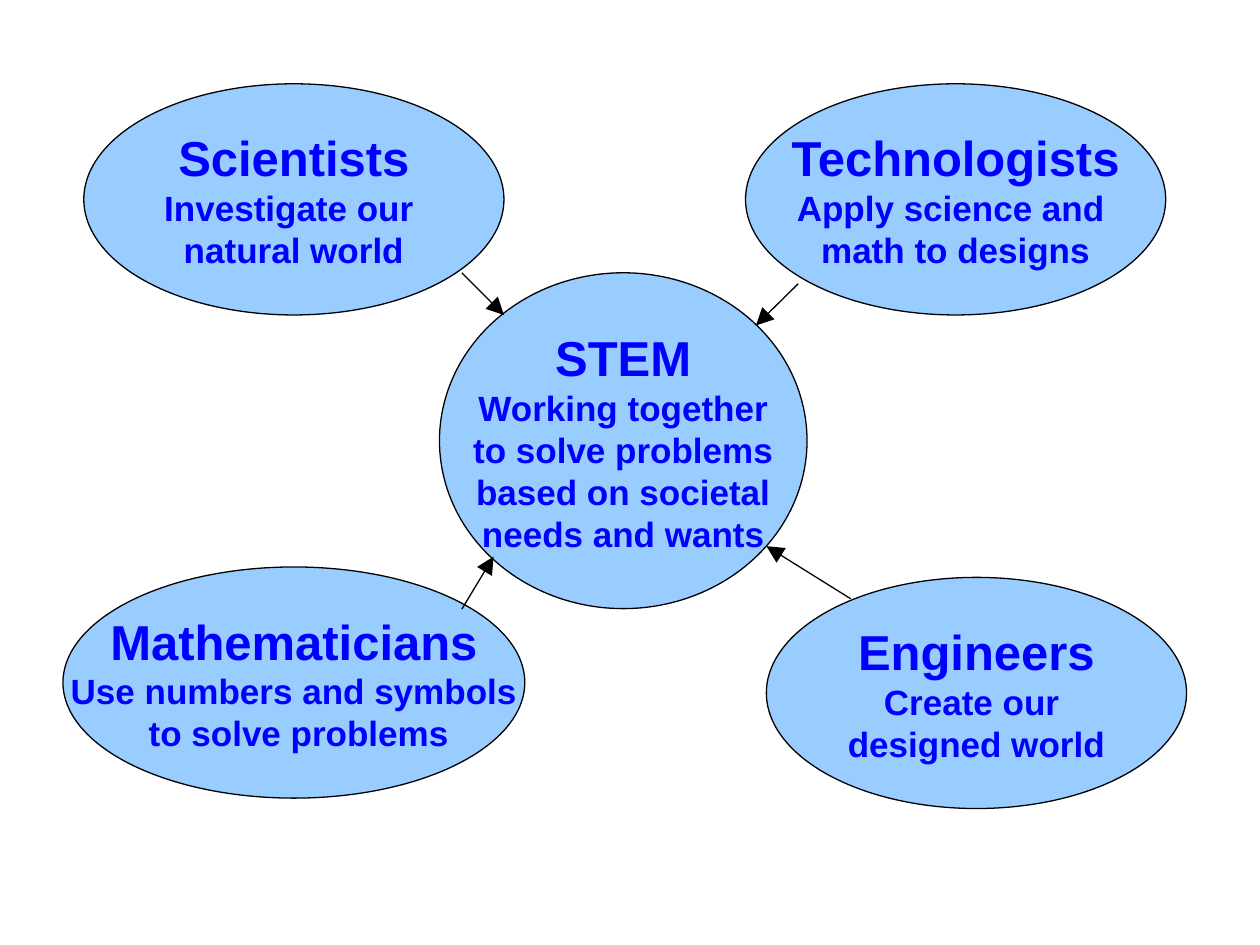
from lxml.etree import SubElement
from pptx import Presentation
from pptx.dml.color import RGBColor
from pptx.enum.shapes import MSO_CONNECTOR, MSO_SHAPE
from pptx.enum.text import MSO_ANCHOR, PP_ALIGN
from pptx.oxml.ns import qn
from pptx.util import Cm, Pt

SKY = RGBColor(0x99, 0xCC, 0xFF)
BLUE = RGBColor(0x00, 0x00, 0xFF)
BLACK = RGBColor(0x00, 0x00, 0x00)
OUTLINE = Pt(0.75)


def add_line_of_text(paragraph, text, *, size, color=BLUE, bold=True, font="Arial"):
    paragraph.alignment = PP_ALIGN.CENTER
    run = paragraph.add_run()
    run.text = text
    run.font.name = font
    run.font.size = Pt(size)
    run.font.bold = bold
    run.font.color.rgb = color


deck = Presentation()
deck.slide_width, deck.slide_height = Cm(25.4), Cm(19.05)
slide = deck.slides.add_slide(deck.slide_layouts[6])

# Four disciplines around STEM: left, top, width, height in cm, heading, description
roles = [
    (1.69, 1.69, 8.47, 4.66, "Scientists", ["Investigate our ", "natural world"]),
    (15.03, 1.69, 8.47, 4.66, "Technologists", ["Apply science and ", "math to designs"]),
    (1.27, 11.43, 9.31, 4.66, "Mathematicians",
     ["Use numbers and symbols", " to solve problems"]),
    (15.45, 11.64, 8.47, 4.66, "Engineers", ["Create our ", "designed world"]),
    (8.86, 5.5, 7.41, 6.77, "STEM",
     ["Working together", "to solve problems", "based on societal", "needs and wants"]),
]
for left, top, width, height, heading, description in roles:
    role = slide.shapes.add_shape(
        MSO_SHAPE.OVAL, Cm(left), Cm(top), Cm(width), Cm(height))
    role.shadow.inherit = False
    role.fill.solid()
    role.fill.fore_color.rgb = SKY
    role.line.color.rgb = BLACK
    role.line.width = OUTLINE

    frame = role.text_frame
    frame.word_wrap = False
    frame.vertical_anchor = MSO_ANCHOR.MIDDLE
    frame.margin_left = frame.margin_right = frame.margin_top = frame.margin_bottom = 0
    add_line_of_text(frame.paragraphs[0], heading, size=28)
    for text in description:
        add_line_of_text(frame.add_paragraph(), text, size=20)

# Arrows from each discipline to STEM: start x, y and end x, y in cm
arrows = [
    (9.31, 12.28, 9.95, 11.22),
    (17.15, 12.07, 15.45, 11.01),
    (16.09, 5.72, 15.24, 6.56),
    (9.31, 5.5, 10.16, 6.35),
]
for ends in arrows:
    arrow = slide.shapes.add_connector(
        MSO_CONNECTOR.STRAIGHT, *[Cm(position) for position in ends])
    arrow.line.color.rgb = BLACK
    arrow.line.width = OUTLINE
    SubElement(arrow.line._get_or_add_ln(), qn("a:tailEnd"),
               type="triangle", w="lg", len="lg")
    SubElement(arrow._element.spPr, qn("a:effectLst"))

deck.save("out.pptx")
